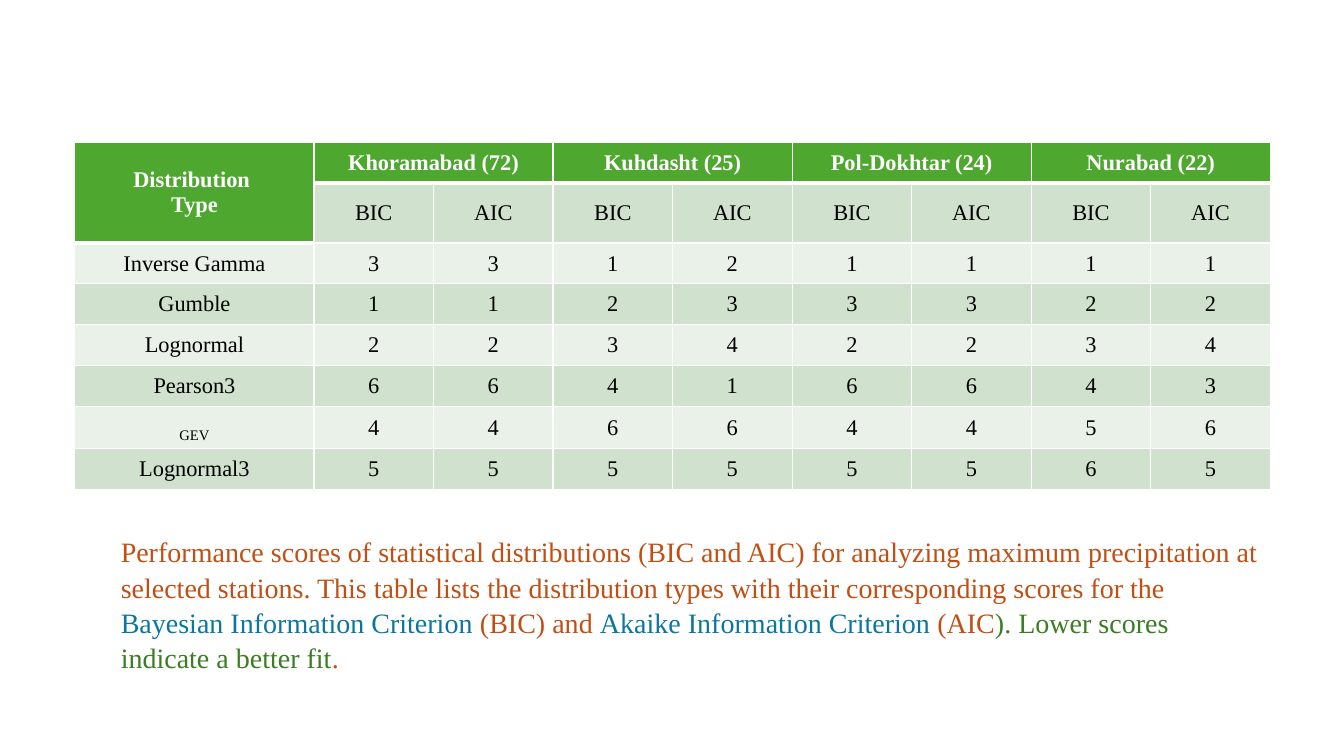
"""Build a slide with a table of distribution scores and its caption."""
from dataclasses import dataclass

from lxml.etree import SubElement
from pptx import Presentation
from pptx.dml.color import RGBColor
from pptx.enum.text import MSO_ANCHOR as Anchor, PP_ALIGN as Align
from pptx.oxml.ns import qn
from pptx.util import Pt

FONT = "Times New Roman"
WHITE = RGBColor(0xFF, 0xFF, 0xFF)
BLACK = RGBColor(0x00, 0x00, 0x00)
HEADER_GREEN = RGBColor(0x4E, 0xA7, 0x2E)
DARK_BAND = RGBColor(0xD0, 0xE1, 0xCD)
LIGHT_BAND = RGBColor(0xE9, 0xF1, 0xE8)
ORANGE = RGBColor(0xC0, 0x4F, 0x15)
BLUE = RGBColor(0x0B, 0x76, 0xA0)
GREEN = RGBColor(0x3B, 0x7D, 0x23)

TABLE_LEFT, TABLE_TOP = 53.5, 101.6
SCORE_WIDTH, ROW_HEIGHT, CRITERIA_HEIGHT = 85.4, 29.2, 42
THIN, THICK = 1, 3


@dataclass(frozen=True)
class Distribution:
    name: str
    scores: str
    size: float = 16
    baseline: int = 0


@dataclass(frozen=True)
class Phrase:
    text: str
    color: RGBColor


STATIONS = ["Khoramabad (72)", "Kuhdasht (25)", "Pol-Dokhtar (24)", "Nurabad (22)"]
CRITERIA = ["BIC", "AIC"]
DISTRIBUTIONS = [
    Distribution("Inverse Gamma", "33121111"),
    Distribution("Gumble", "11233322"),
    Distribution("Lognormal", "22342234"),
    Distribution("Pearson3", "66416643"),
    Distribution("GEV", "44664456", size=18, baseline=-25000),
    Distribution("Lognormal3", "55555565"),
]
CAPTION = [
    Phrase("Performance scores of statistical distributions (BIC and AIC) for analyzing "
           "maximum precipitation at selected stations. This table lists the distribution "
           "types with their corresponding scores for the ", ORANGE),
    Phrase("Bayesian Information Criterion ", BLUE),
    Phrase("(BIC) and ", ORANGE),
    Phrase("Akaike Information Criterion ", BLUE),
    Phrase("(AIC", ORANGE),
    Phrase("). Lower scores indicate a better fit", GREEN),
    Phrase(".", ORANGE),
]


def add_text(paragraph, text: str, *, size: float = 16, color: RGBColor = BLACK,
             bold: bool = False, baseline: int = 0) -> None:
    run = paragraph.add_run()
    run.text = text
    run.font.name = FONT
    run.font.size = Pt(size)
    run.font.bold = bold
    run.font.color.rgb = color
    if baseline:
        run._r.get_or_add_rPr().set("baseline", str(baseline))


def is_header(row: int, column: int) -> bool:
    return row == 0 or (row == 1 and column == 0)


def format_cell(cell, row: int, column: int) -> None:
    header = is_header(row, column)
    below_header = row > 0 and is_header(row - 1, column)
    widths = {"lnL": THIN, "lnR": THIN, "lnT": THICK if below_header else THIN,
              "lnB": THICK if header else THIN}
    properties = cell._tc.get_or_add_tcPr()
    for tag, width in widths.items():
        line = SubElement(properties, qn(f"a:{tag}"), w=str(Pt(width)))
        fill = SubElement(line, qn("a:solidFill"))
        SubElement(fill, qn("a:srgbClr"), val=str(WHITE))
    band = DARK_BAND if row % 2 else LIGHT_BAND
    cell.fill.solid()
    cell.fill.fore_color.rgb = HEADER_GREEN if header else band
    cell.vertical_anchor = Anchor.MIDDLE


def write_cell(cell, *lines: str, **text_format) -> None:
    frame = cell.text_frame
    for index, line in enumerate(lines):
        paragraph = frame.add_paragraph() if index else frame.paragraphs[0]
        paragraph.alignment = Align.CENTER
        add_text(paragraph, line, **text_format)


def add_score_table(slide) -> None:
    row_count = len(DISTRIBUTIONS) + 2
    score_count = len(STATIONS) * len(CRITERIA)
    heights = [ROW_HEIGHT] * row_count
    heights[1] = CRITERIA_HEIGHT
    widths = [2 * SCORE_WIDTH] + [SCORE_WIDTH] * score_count
    table = slide.shapes.add_table(
        row_count, len(widths), Pt(TABLE_LEFT), Pt(TABLE_TOP),
        Pt(sum(widths)), Pt(sum(heights))).table
    table.first_row = table.horz_banding = False
    for column, width in zip(table.columns, widths):
        column.width = Pt(width)
    for row, height in zip(table.rows, heights):
        row.height = Pt(height)
    for row in range(row_count):
        for column in range(len(widths)):
            format_cell(table.cell(row, column), row, column)

    corner = table.cell(0, 0)
    corner.merge(table.cell(1, 0))
    write_cell(corner, "Distribution ", "Type", color=WHITE, bold=True)
    for index, station in enumerate(STATIONS):
        first = 1 + index * len(CRITERIA)
        heading = table.cell(0, first)
        heading.merge(table.cell(0, first + len(CRITERIA) - 1))
        write_cell(heading, station, color=WHITE, bold=True)
        for offset, criterion in enumerate(CRITERIA):
            write_cell(table.cell(1, first + offset), criterion)
    for row, distribution in enumerate(DISTRIBUTIONS, start=2):
        write_cell(table.cell(row, 0), distribution.name,
                   size=distribution.size, baseline=distribution.baseline)
        for column, score in enumerate(distribution.scores, start=1):
            write_cell(table.cell(row, column), score)


def add_caption(slide) -> None:
    frame = slide.shapes.add_textbox(Pt(79.2), Pt(377.3), Pt(828), Pt(104.4)).text_frame
    frame.word_wrap = True
    paragraph = frame.paragraphs[0]
    paragraph.line_spacing = 1.05
    for phrase in CAPTION:
        add_text(paragraph, phrase.text, size=20, color=phrase.color)


def main() -> None:
    presentation = Presentation()
    presentation.slide_width, presentation.slide_height = Pt(960), Pt(540)
    slide = presentation.slides.add_slide(presentation.slide_layouts[6])
    add_score_table(slide)
    add_caption(slide)
    presentation.save("out.pptx")


if __name__ == "__main__":
    main()
